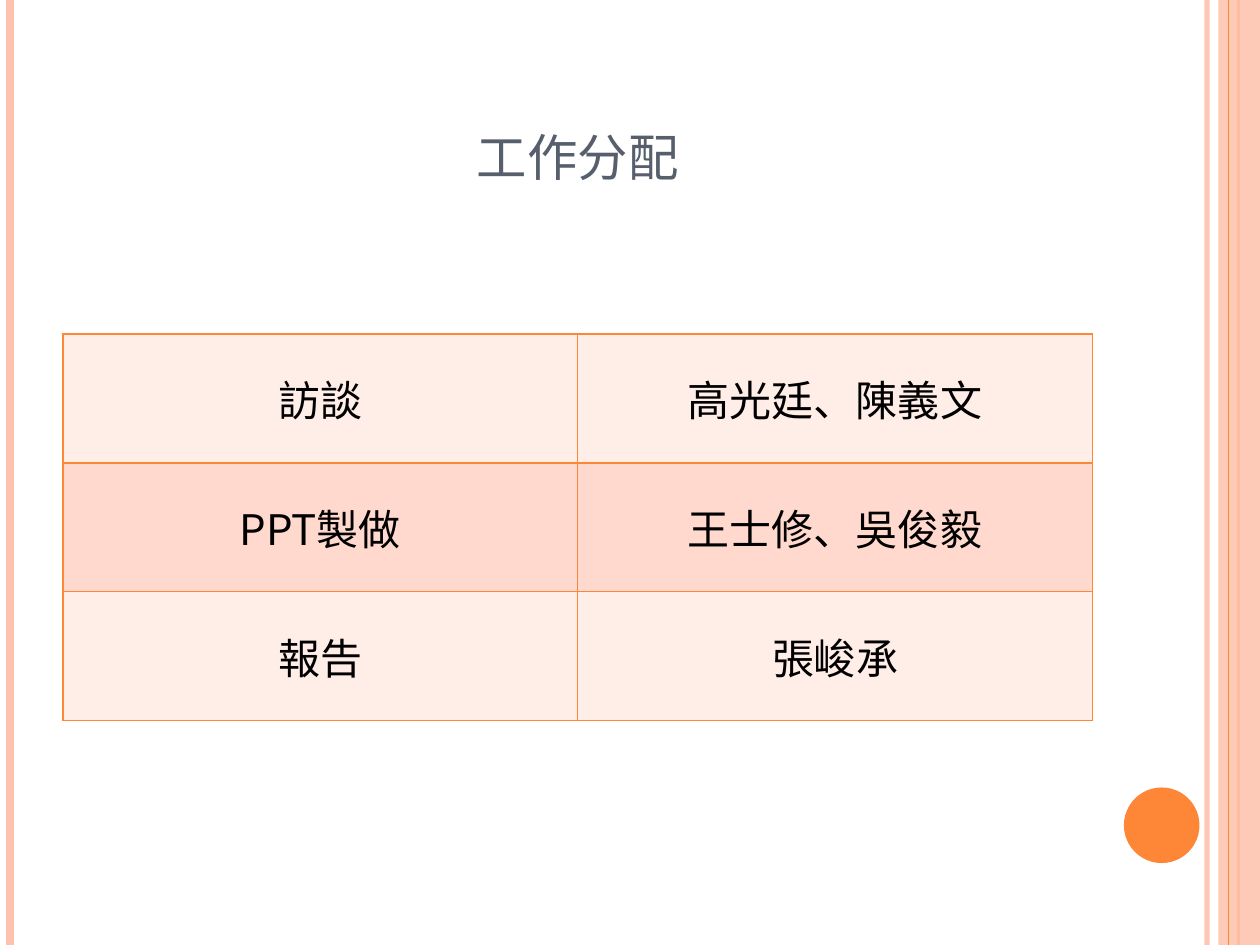
from dataclasses import dataclass

from lxml.etree import SubElement
from pptx import Presentation
from pptx.dml.color import RGBColor
from pptx.enum.shapes import MSO_CONNECTOR, MSO_SHAPE
from pptx.enum.text import MSO_ANCHOR, PP_ALIGN
from pptx.oxml.ns import qn
from pptx.util import Inches, Pt


@dataclass(frozen=True)
class Theme:
    font: str = "Noto Sans CJK SC"
    title_size: int = 36
    cell_size: int = 24
    title: str = "575F6D"
    text: str = "000000"
    accent: str = "FE8637"
    pale: str = "FEC3AE"
    bands: tuple = ("FFEDE8", "FFD9CE")


def set_alpha(fill_parent, percent):
    """Make the solid fill directly under the element partly transparent."""
    color = fill_parent.find(qn("a:solidFill"))[0]
    SubElement(color, qn("a:alpha"), val=str(percent * 1000))


class SlideBuilder:
    def __init__(self, slide, theme):
        self.s = slide
        self.theme = theme

    def add_text(self, tf, text, size, color):
        p = tf.paragraphs[0]
        p.alignment = PP_ALIGN.CENTER
        r = p.add_run()
        r.text = text
        formats = {"name": self.theme.font, "size": Pt(size), "bold": False}
        for name, value in formats.items():
            setattr(r.font, name, value)
        r.font.color.rgb = RGBColor.from_string(color)
        SubElement(r.font._element, qn("a:ea"), typeface=self.theme.font)
        return r

    def title(self, text, x, y, w, h):
        sp = self.s.shapes.title
        box = {"left": x, "top": y, "width": w, "height": h}
        for name, value in box.items():
            setattr(sp, name, Inches(value))
        sp.text_frame.vertical_anchor = MSO_ANCHOR.BOTTOM
        r = self.add_text(sp.text_frame, text, self.theme.title_size, self.theme.title)
        r.font._element.set("cap", "small")

    def vertical_line(self, x, color, width, alpha=100):
        line = self.s.shapes.add_connector(
            MSO_CONNECTOR.STRAIGHT, Inches(x), 0, Inches(x), Inches(7.5))
        line.line.color.rgb = RGBColor.from_string(color)
        line.line.width = Pt(width)
        sp_pr = line._element.spPr
        if alpha < 100:
            set_alpha(sp_pr.find(qn("a:ln")), alpha)
        SubElement(sp_pr, qn("a:effectLst"))

    def shape(self, kind, x, y, w, h, color, alpha=100):
        sp = self.s.shapes.add_shape(kind, Inches(x), Inches(y), Inches(w), Inches(h))
        sp.shadow.inherit = False
        sp.fill.solid()
        sp.fill.fore_color.rgb = RGBColor.from_string(color)
        sp.line.fill.background()
        if alpha < 100:
            set_alpha(sp._element.spPr, alpha)

    def cell_borders(self, cell):
        tc_pr = cell._tc.get_or_add_tcPr()
        for i, side in enumerate(("lnL", "lnR", "lnT", "lnB")):
            ln = tc_pr.makeelement(qn(f"a:{side}"), {"w": str(Pt(1))})
            fill = SubElement(ln, qn("a:solidFill"))
            SubElement(fill, qn("a:srgbClr"), val=self.theme.accent)
            tc_pr.insert(i, ln)

    def table(self, rows, x, y, w, h):
        table = self.s.shapes.add_table(
            len(rows), len(rows[0]), Inches(x), Inches(y), Inches(w), Inches(h)).table
        table.first_row = False
        for i, row in enumerate(rows):
            for j, text in enumerate(row):
                cell = table.cell(i, j)
                cell.vertical_anchor = MSO_ANCHOR.MIDDLE
                cell.fill.solid()
                cell.fill.fore_color.rgb = RGBColor.from_string(self.theme.bands[i % 2])
                self.add_text(cell.text_frame, text, self.theme.cell_size, self.theme.text)
                self.cell_borders(cell)


def main():
    prs = Presentation()
    prs.slide_width, prs.slide_height = Inches(10), Inches(7.5)
    theme = Theme()
    b = SlideBuilder(prs.slides.add_slide(prs.slide_layouts[5]), theme)

    b.vertical_line(9.58, theme.pale, 3, alpha=93)
    b.vertical_line(0.08, theme.pale, 4.5)
    b.vertical_line(9.83, theme.accent, 1.5)
    b.shape(MSO_SHAPE.RECTANGLE, 9.67, 0, 0.33, 7.5, theme.pale, alpha=87)
    b.vertical_line(9.75, theme.accent, 0.75)
    b.shape(MSO_SHAPE.OVAL, 8.92, 6.25, 0.6, 0.6, theme.accent)

    b.title("工作分配", 0.5, 0.3, 8.17, 1.25)
    assignments = [
        ("訪談", "高光廷、陳義文"),
        ("PPT製做", "王士修、吳俊毅"),
        ("報告", "張峻承"),
    ]
    b.table(assignments, 0.5, 2.65, 8.17, 3.07)
    prs.save("out.pptx")


if __name__ == "__main__":
    main()
